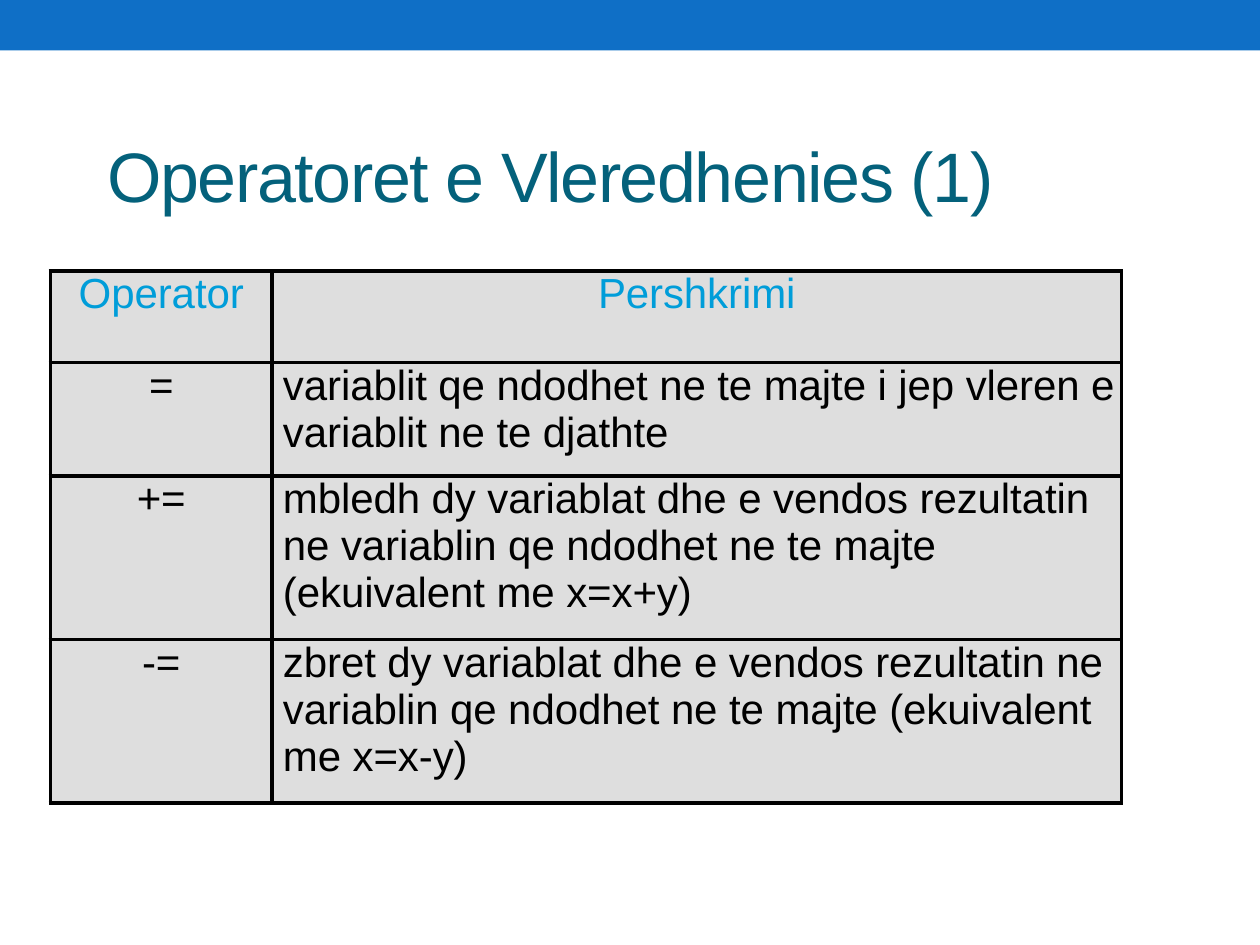
from dataclasses import dataclass

from lxml.etree import SubElement
from pptx import Presentation
from pptx.dml.color import RGBColor
from pptx.enum.shapes import MSO_SHAPE
from pptx.enum.text import PP_ALIGN
from pptx.oxml.ns import qn
from pptx.util import Pt


@dataclass(frozen=True)
class Theme:
    font: str = "Arial"
    title_size: int = 40
    table_size: int = 24
    bar: str = "0F6FC6"
    title: str = "04617B"
    heading: str = "009DD9"
    body: str = "000000"
    cell: str = "DEDEDE"
    border: str = "000000"


THEME = Theme()


def format_paragraph(paragraph, size, color, spacing, indent=0):
    """Format the runs; spacing is between letters, in hundredths of a point."""
    if indent:
        paragraph._p.get_or_add_pPr().set("marL", str(Pt(indent)))
    for run in paragraph.runs:
        run.font.name = THEME.font
        run.font.size = Pt(size)
        run.font.bold = False
        run.font.color.rgb = RGBColor.from_string(color)
        run.font._element.set("spc", str(spacing))


def add_borders(cell, width):
    properties = cell._tc.get_or_add_tcPr()
    for side in ("a:lnL", "a:lnR", "a:lnT", "a:lnB"):
        line = SubElement(properties, qn(side), w=str(Pt(width)))
        fill = SubElement(line, qn("a:solidFill"))
        SubElement(fill, qn("a:srgbClr"), val=THEME.border)


presentation = Presentation()
presentation.slide_width = Pt(720)
presentation.slide_height = Pt(540)
slide = presentation.slides.add_slide(presentation.slide_layouts[6])

# Top bar
bar = slide.shapes.add_shape(MSO_SHAPE.RECTANGLE, 0, 0, Pt(720), Pt(28.8))
bar.shadow.inherit = False
bar.fill.solid()
bar.fill.fore_color.rgb = RGBColor.from_string(THEME.bar)
bar.line.fill.background()

# Title
title = slide.shapes.add_textbox(Pt(42.5), Pt(44), Pt(636), Pt(81.5))
title_frame = title.text_frame
title_frame.word_wrap = True
title_frame.margin_left = title_frame.margin_right = title_frame.margin_bottom = 0
title_frame.margin_top = Pt(31.7)
title_frame.text = "Operatoret e Vleredhenies (1)"
format_paragraph(title_frame.paragraphs[0], THEME.title_size, THEME.title, -80, 18.7)

# Operator table
ROWS = [
    ("Operator", "Pershkrimi"),
    ("=", "variablit qe ndodhet ne te majte i jep vleren e variablit ne te djathte"),
    ("+=", "mbledh dy variablat dhe e vendos rezultatin ne variablin qe ndodhet "
           "ne te majte (ekuivalent me x=x+y)"),
    ("-=", "zbret dy variablat dhe e vendos rezultatin ne variablin qe ndodhet "
           "ne te majte (ekuivalent me x=x-y)"),
]
COLUMN_WIDTHS = (126.7, 485.3)
ROW_HEIGHTS = (52.2, 65, 93.5, 93.5)

table = slide.shapes.add_table(
    len(ROWS), len(COLUMN_WIDTHS), Pt(28.8), Pt(154.8),
    Pt(sum(COLUMN_WIDTHS)), Pt(sum(ROW_HEIGHTS))).table
table.first_row = table.horz_banding = False
for column, width in zip(table.columns, COLUMN_WIDTHS):
    column.width = Pt(width)

for row_index, (texts, height) in enumerate(zip(ROWS, ROW_HEIGHTS)):
    table.rows[row_index].height = Pt(height)
    color = THEME.body if row_index else THEME.heading
    for column_index, text in enumerate(texts):
        cell = table.cell(row_index, column_index)
        cell.margin_left = cell.margin_right = cell.margin_top = cell.margin_bottom = 0
        add_borders(cell, 2.25)
        cell.fill.solid()
        cell.fill.fore_color.rgb = RGBColor.from_string(THEME.cell)
        cell.text_frame.text = text
        paragraph = cell.text_frame.paragraphs[0]
        is_description = row_index > 0 and column_index == 1
        paragraph.alignment = PP_ALIGN.LEFT if is_description else PP_ALIGN.CENTER
        format_paragraph(paragraph, THEME.table_size, color, -5,
                         6.2 if is_description else 0)

presentation.save("out.pptx")
